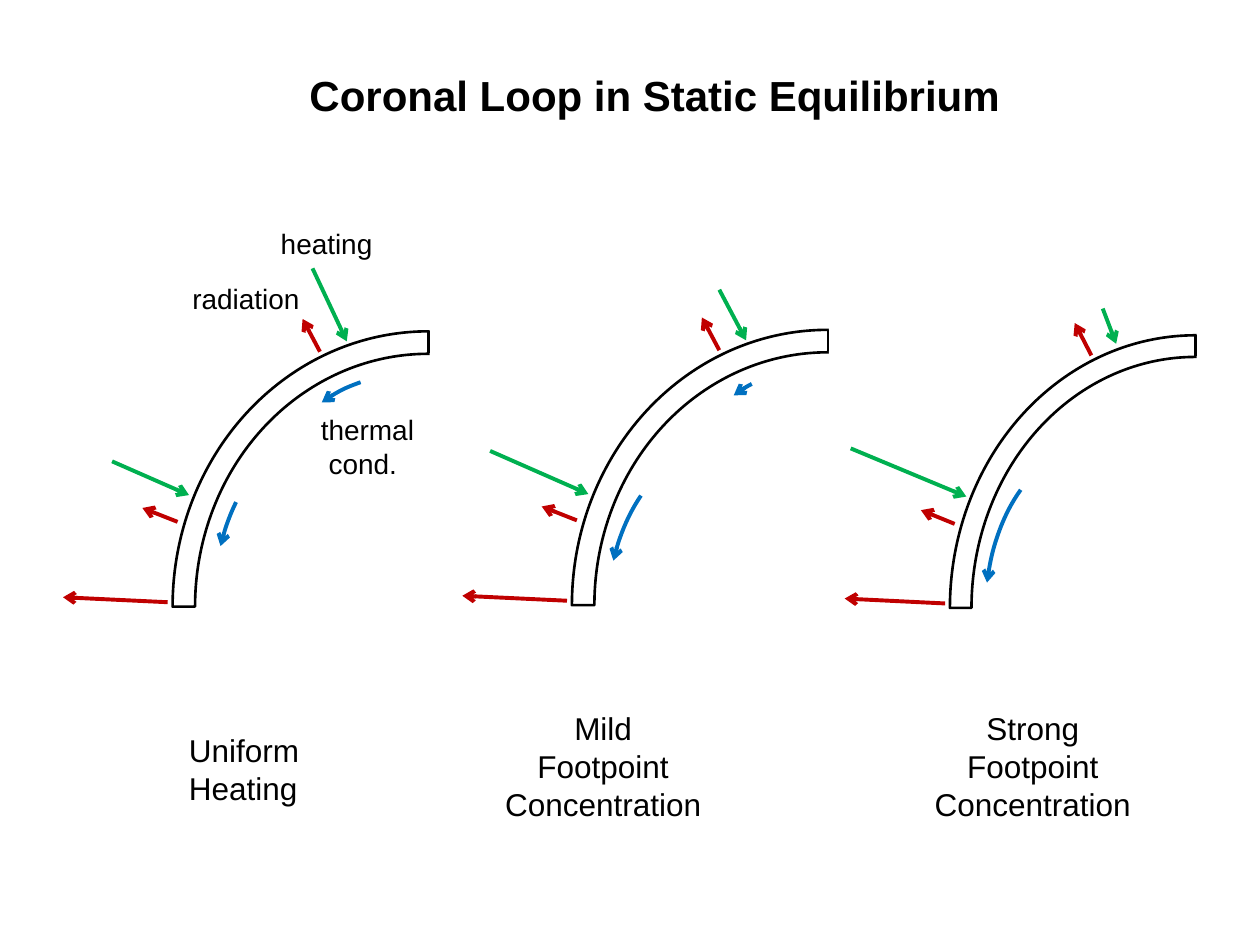
from dataclasses import dataclass

from lxml.etree import SubElement
from pptx import Presentation
from pptx.dml.color import RGBColor
from pptx.enum.shapes import MSO_CONNECTOR, MSO_SHAPE as SHAPE
from pptx.enum.text import MSO_AUTO_SIZE as AUTO, PP_ALIGN as ALIGN
from pptx.oxml.ns import qn
from pptx.util import Cm, Pt


@dataclass(frozen=True)
class Theme:
    ink = RGBColor(0, 0, 0)
    paper = RGBColor(255, 255, 255)
    heating = RGBColor(0, 176, 80)
    radiation = RGBColor(192, 0, 0)
    conduction = RGBColor(0, 112, 192)
    font = "Arial"
    title = Pt(24)
    caption = Pt(18)
    label = Pt(16)
    outline = Pt(1.5)
    arrow = Pt(2.25)


def set_line(sp, color, width, end=None):
    sp.line.color.rgb = color
    sp.line.width = width
    if end:
        SubElement(sp.line._ln, qn(f"a:{end}"), type="arrow")


def add_line(x1, y1, x2, y2, color, width, end=None):
    line = s.shapes.add_connector(MSO_CONNECTOR.STRAIGHT, Cm(x1), Cm(y1), Cm(x2), Cm(y2))
    set_line(line, color, width, end)
    SubElement(line._element.spPr, qn("a:effectLst"))


theme = Theme()
prs = Presentation()
prs.slide_width, prs.slide_height = Cm(25.4), Cm(19.05)
s = prs.slides.add_slide(prs.slide_layouts[6])

loops = [
    dict(origin=(3.48, 6.68), scale=(1, 1),
         heating=[(6.3, 5.41, 6.99, 6.88), (2.26, 9.3, 3.81, 9.98)],
         conduction=[(5.84, 7.49, 5.51, 3.51, 124.93, 137.58),
                     (4.32, 8.81, 4.32, 6.65, 125.39, 137.69)]),
    dict(origin=(11.53, 6.65), scale=(1, 1),
         heating=[(14.5, 5.84, 15.04, 6.86), (9.88, 9.09, 11.86, 9.96)],
         conduction=[(14.15, 7.34, 5.51, 3.53, 124.93, 130.78),
                     (12.24, 9.09, 4.32, 6.68, 125.39, 143.27)]),
    dict(origin=(19.15, 6.76), scale=(0.96, 0.99),
         heating=[(22.23, 6.22, 22.5, 6.93), (17.15, 9.04, 19.48, 10.01)],
         conduction=[(19.86, 9.07, 4.14, 6.63, 118.49, 145.01)]),
]
radiation = [(2.97, 0.41, 2.62, -0.25), (0.1, 3.84, -0.61, 3.56), (-0.1, 5.46, -2.21, 5.36)]

for loop in loops:
    x, y = loop["origin"]
    sx, sy = loop["scale"]

    tube = s.shapes.add_shape(SHAPE.CIRCULAR_ARROW, Cm(x), Cm(y), Cm(10.31 * sx), Cm(11.1 * sy))
    for i, value in enumerate((0.075, 0.105, 0.099, 108, 0.022)):
        tube.adjustments[i] = value
    tube.fill.solid()
    tube.fill.fore_color.rgb = theme.paper
    tube.shadow.inherit = False
    set_line(tube, theme.ink, theme.outline)

    for x1, y1, x2, y2 in radiation:
        add_line(x + x1 * sx, y + y1 * sy, x + x2 * sx, y + y2 * sy,
                 theme.radiation, theme.arrow, "tailEnd")
    for ends in loop["heating"]:
        add_line(*ends, theme.heating, theme.arrow, "tailEnd")
    for left, top, width, height, start, stop in loop["conduction"]:
        arc = s.shapes.add_shape(SHAPE.ARC, Cm(left), Cm(top), Cm(width), Cm(height))
        arc.adjustments[0], arc.adjustments[1] = start, stop
        arc.fill.background()
        arc.shadow.inherit = False
        set_line(arc, theme.conduction, theme.arrow, "headEnd")

    mask = s.shapes.add_shape(SHAPE.RECTANGLE, Cm(x + 5.18 * sx), Cm(y - 0.53 * sy),
                              Cm(5.31 * sx), Cm(6.3 * sy))
    mask.fill.solid()
    mask.fill.fore_color.rgb = theme.paper
    mask.line.fill.background()
    mask.shadow.inherit = False
    apex = x + 5.16 * sx
    add_line(apex, y, apex, y + 0.43 * sy, theme.ink, theme.outline)

texts = [
    (5.41, 4.45, 2.39, 0.94, theme.label, ALIGN.LEFT, ["heating"]),
    (3.63, 5.56, 2.69, 0.94, theme.label, ALIGN.LEFT, ["radiation"]),
    (6.22, 8.2, 2.41, 1.63, theme.label, ALIGN.LEFT, ["thermal", " cond."]),
    (5.99, 1.27, 14.55, 1.27, theme.title, ALIGN.LEFT, ["Coronal Loop in Static Equilibrium"]),
    (3.56, 14.61, 2.77, 1.8, theme.caption, ALIGN.LEFT, ["Uniform", "Heating"]),
    (9.91, 14.17, 4.5, 2.57, theme.caption, ALIGN.CENTER, ["Mild", "Footpoint", "Concentration"]),
    (18.57, 14.17, 4.5, 2.57, theme.caption, ALIGN.CENTER, ["Strong", "Footpoint", "Concentration"]),
]
for left, top, width, height, size, align, lines in texts:
    tf = s.shapes.add_textbox(Cm(left), Cm(top), Cm(width), Cm(height)).text_frame
    tf.word_wrap = False
    tf.auto_size = AUTO.SHAPE_TO_FIT_TEXT
    for i, line in enumerate(lines):
        p = tf.add_paragraph() if i else tf.paragraphs[0]
        p.alignment = align
        r = p.add_run()
        r.text = line
        r.font.name = theme.font
        r.font.size = size
        r.font.bold = size == theme.title
        r.font.color.rgb = theme.ink

prs.save("out.pptx")
